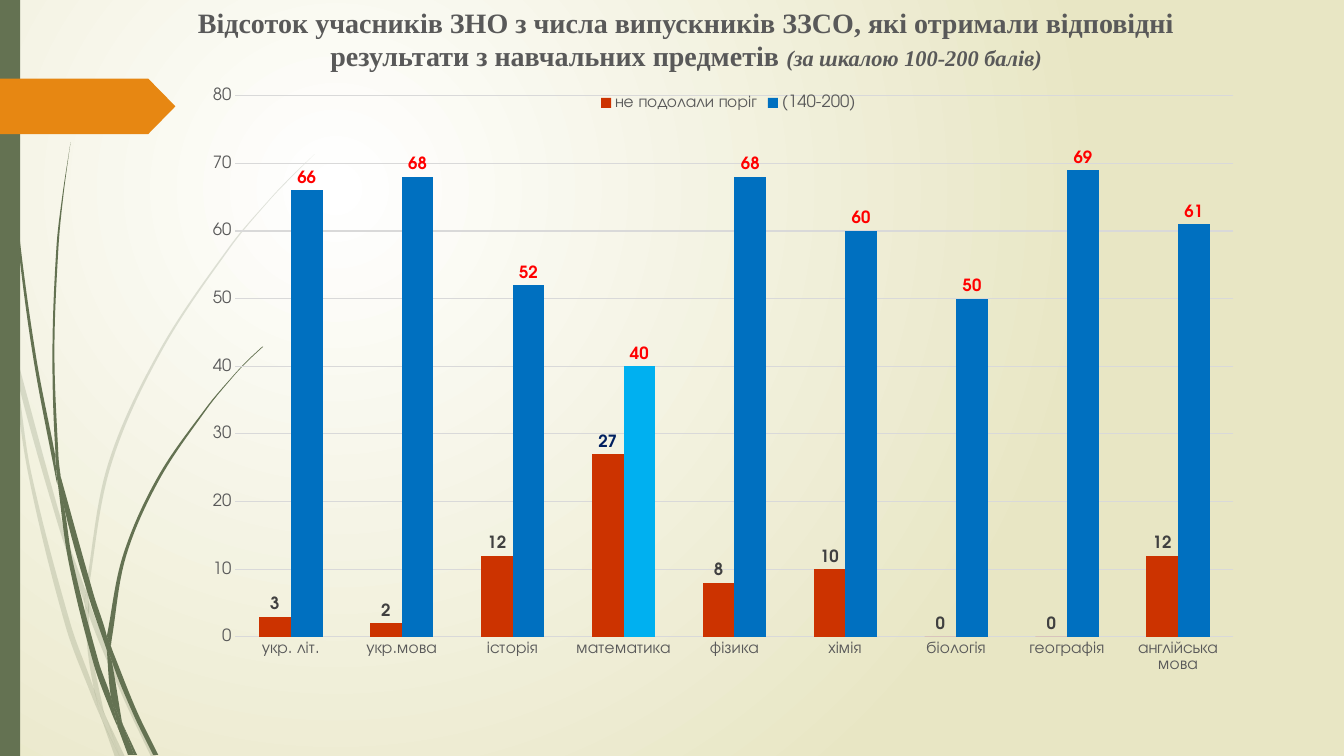
from dataclasses import dataclass
from math import dist

from lxml import etree
from pptx import Presentation
from pptx.chart.data import CategoryChartData
from pptx.dml.color import RGBColor
from pptx.enum.chart import XL_CHART_TYPE, XL_LABEL_POSITION, XL_LEGEND_POSITION, XL_TICK_MARK
from pptx.enum.shapes import MSO_SHAPE
from pptx.enum.text import MSO_ANCHOR, MSO_AUTO_SIZE, PP_ALIGN
from pptx.oxml import parse_xml
from pptx.oxml.ns import nsdecls, qn
from pptx.util import Pt

PX = 9144  # EMU in one px, 100 px to the inch
WIDTH, HEIGHT = 1333, 750
TITLE_ONLY = 5
PALE_ALPHA = 20
COLUMNS = XL_CHART_TYPE.COLUMN_CLUSTERED
OUTSIDE = XL_LABEL_POSITION.OUTSIDE_END
NO_TICK = XL_TICK_MARK.NONE
CHART_FONT, TITLE_FONT = "TeX Gyre Adventor", "Times New Roman"
COLORS = {
    "white": "FFFFFF", "sand": "E8E6C4", "green": "647252", "orange": "E78712",
    "text": "595959", "grid": "D9D9D9", "label": "404040", "navy": "002060",
    "brick": "CC3300", "blue": "0070C0", "sky": "00B0F0", "red": "FF0000",
}
Points = list[tuple[int, int]]


@dataclass
class Blade:
    """A piece of grass between two edges, both listed from tip to root."""
    left: Points
    right: Points


@dataclass
class Results:
    name: str
    values: tuple[int, ...]
    color: str
    label_color: str


PALE_BLADES = [
    Blade([(0, 299), (10, 344), (11, 350)], [(0, 282), (9, 322), (11, 350)]),
    Blade([(14, 345), (17, 376), (58, 522), (84, 599)], [(14, 345), (62, 520), (85, 586)]),
    Blade([(88, 596), (88, 610), (123, 694), (150, 751)],
          [(88, 596), (92, 607), (127, 692), (155, 751)]),
    Blade([(105, 711), (119, 751)], [(105, 711), (124, 751)]),
    Blade([(11, 350), (28, 470), (65, 621), (92, 693), (101, 714)],
          [(11, 350), (17, 376), (31, 469), (70, 619), (93, 683), (99, 707), (101, 714)]),
    Blade([(84, 599), (87, 646), (93, 683), (96, 692), (105, 711)],
          [(84, 599), (88, 608), (88, 610), (91, 646), (103, 706), (105, 711)]),
    Blade([(312, 153), (289, 175), (268, 197), (228, 244), (158, 348), (107, 461),
           (85, 584), (85, 586), (88, 596)],
          [(312, 153), (290, 175), (268, 198), (229, 245), (160, 349), (110, 462),
           (88, 584), (88, 596)]),
    Blade([(101, 714), (114, 751)], [(101, 714), (119, 751)]),
    Blade([(85, 586), (84, 599), (88, 608)], [(85, 586), (88, 596), (88, 610)]),
    Blade([(93, 683), (99, 707), (101, 714), (119, 751)],
          [(93, 683), (96, 692), (105, 711), (119, 751)]),
]
GREEN_BLADES = [
    Blade([(3, 0), (4, 48), (7, 110), (17, 233), (33, 355), (56, 477), (57, 481)],
          [(4, 0), (5, 48), (8, 109), (19, 232), (36, 355), (55, 453), (55, 457), (57, 481)]),
    Blade([(60, 472), (64, 505), (88, 592), (106, 645)],
          [(60, 472), (93, 590), (106, 631), (106, 645)]),
    Blade([(110, 641), (111, 656), (132, 708), (152, 749)],
          [(110, 641), (113, 649), (136, 706), (157, 749)]),
    Blade([(57, 477), (68, 557), (93, 659), (111, 708), (117, 722)],
          [(57, 477), (64, 505), (72, 556), (98, 657), (110, 691), (116, 717), (117, 722)]),
    Blade([(70, 141), (62, 193), (56, 245), (52, 349), (55, 449), (60, 472)],
          [(70, 141), (63, 193), (58, 245), (54, 349), (58, 453), (60, 472)]),
    Blade([(122, 719), (133, 749)], [(122, 719), (136, 749)]),
    Blade([(55, 449), (55, 453), (57, 477), (64, 505)], [(55, 449), (60, 472), (64, 505)]),
    Blade([(260, 344), (245, 358), (231, 373), (204, 405), (156, 474), (122, 551), (106, 631)],
          [(261, 344), (245, 359), (231, 374), (205, 406), (158, 476), (125, 552),
           (111, 633), (110, 641)]),
    Blade([(117, 722), (127, 749)], [(117, 722), (131, 749)]),
    Blade([(106, 645), (110, 691), (116, 706), (122, 719)],
          [(106, 645), (109, 651), (111, 656), (121, 716), (122, 719)]),
    Blade([(106, 631), (106, 645), (109, 651), (111, 656)],
          [(106, 631), (110, 641), (111, 656)]),
    Blade([(110, 691), (116, 717), (117, 722), (130, 749)],
          [(110, 691), (116, 706), (122, 719), (133, 749)]),
]
SUBJECTS = ["укр. літ.", "укр.мова", "історія", "математика", "фізика", "хімія",
            "біологія", "географія", "англійська мова"]
MATHS = SUBJECTS.index("математика")
RESULTS = [
    Results("не подолали поріг", (3, 2, 12, 27, 8, 10, 0, 0, 12), "brick", "label"),
    Results("(140-200)", (66, 68, 52, 40, 68, 60, 50, 69, 61), "blue", "red"),
]
TITLE_SPANS = [
    ("Відсоток учасників ЗНО з числа випускників ЗЗСО, які отримали відповідні "
     "результати з навчальних предметів ", 20, False),
    ("(за шкалою 100-200 балів)", 16, True),
]


def rgb(name: str) -> RGBColor:
    return RGBColor.from_string(COLORS[name])


def paint(shape, color: str) -> None:
    shape.fill.solid()
    shape.fill.fore_color.rgb = rgb(color)
    shape.line.fill.background()
    shape.shadow.inherit = False


def style(font, size: int, color: str, name: str = CHART_FONT, bold: bool = False) -> None:
    font.size, font.name, font.bold = Pt(size), name, bold
    font.color.rgb = rgb(color)


def bend(edge: Points) -> list[Points]:
    """Give the two handles and the end of each curve along an edge."""
    padded = [edge[0], *edge, edge[-1]]
    curves = []
    for a, b, c, d in zip(padded, padded[1:], padded[2:], padded[3:]):
        out, back = (dist(b, c) / dist(p, q) / 3 for p, q in ((a, c), (b, d)))
        curves.append([(b[0] + (c[0] - a[0]) * out, b[1] + (c[1] - a[1]) * out),
                       (c[0] - (d[0] - b[0]) * back, c[1] - (d[1] - b[1]) * back), c])
    return curves


def draw_background(page) -> None:
    fill = page.background.fill
    fill.gradient()
    for stop, position, color in zip(fill.gradient_stops, (0, 1), ("white", "sand")):
        stop.position = position
        stop.color.rgb = rgb(color)
    gradient = page.element.find(".//" + qn("a:gradFill"))
    gradient.replace(gradient.find(qn("a:lin")), parse_xml(
        f'<a:path {nsdecls("a")} path="circle">'
        '<a:fillToRect l="50000" t="50000" r="100000" b="100000"/></a:path>'))


def draw_blade(page, blade: Blade, pale: bool) -> None:
    upward = blade.right[::-1]
    cap = [None] if blade.left[-1] != upward[0] else []
    outline = [(x * PX, y * PX) for x, y in blade.left + upward[1 - len(cap):]]
    builder = page.shapes.build_freeform(*outline[0])
    builder.add_line_segments(outline[1:], close=True)
    shape = builder.convert_to_shape()
    paint(shape, "green")
    curves = bend(blade.left) + cap + bend(upward)
    for line, curve in zip(list(shape.element.iter(qn("a:lnTo"))), curves):
        if curve:
            line.tag = qn("a:cubicBezTo")
            line.clear()
            for x, y in curve:
                etree.SubElement(line, qn("a:pt"), x=str(round(x * PX) - shape.left),
                                 y=str(round(y * PX) - shape.top))
    if pale:
        color = shape.element.find(".//" + qn("a:srgbClr"))
        etree.SubElement(color, qn("a:alpha"), val=str(PALE_ALPHA * 1000))


def draw_preset(page, kind, color: str, left: int, top: int, width: int, height: int):
    shape = page.shapes.add_shape(kind, left * PX, top * PX, width * PX, height * PX)
    paint(shape, color)
    return shape


def draw_title(page) -> None:
    box = page.shapes.title
    box.left, box.top, box.width, box.height = 166 * PX, 0, 1029 * PX, 77 * PX
    frame = box.text_frame
    frame.word_wrap = True
    frame.auto_size = MSO_AUTO_SIZE.SHAPE_TO_FIT_TEXT
    frame.vertical_anchor = MSO_ANCHOR.TOP
    para = frame.paragraphs[0]
    para.alignment = PP_ALIGN.CENTER
    para.space_before = Pt(0)
    for text, size, italic in TITLE_SPANS:
        span = para.add_run()
        span.text = text
        style(span.font, size, "text", TITLE_FONT, bold=True)
        span.font.italic = italic


def draw_chart(page) -> None:
    data = CategoryChartData()
    data.categories = SUBJECTS
    for result in RESULTS:
        data.add_series(result.name, result.values)
    chart = page.shapes.add_chart(COLUMNS, 129 * PX, 83 * PX, 1187 * PX, 667 * PX, data).chart
    chart.has_title = False
    style(chart.font, 10, "text")
    chart.has_legend = True
    chart.legend.position = XL_LEGEND_POSITION.TOP
    chart.legend.include_in_layout = False
    style(chart.legend.font, 12, "text")

    # Axes and plot area
    for axis in (chart.category_axis, chart.value_axis):
        axis.major_tick_mark = axis.minor_tick_mark = NO_TICK
        axis.format.line.fill.background()
        style(axis.tick_labels.font, 12, "text")
    scale = chart.value_axis
    scale.minimum_scale, scale.maximum_scale, scale.major_unit = 0, 80, 10
    scale.major_gridlines.format.line.color.rgb = rgb("grid")
    scale.major_gridlines.format.line.width = Pt(0.75)
    area = chart.element.find(".//" + qn("c:plotArea"))
    for old in area.findall(qn("c:layout")):
        area.remove(old)
    frame = "".join(f'<c:{tag} val="{value}"/>' for tag, value in (
        ("layoutTarget", "inner"), ("xMode", "edge"), ("yMode", "edge"),
        ("x", 0.088), ("y", 0.018), ("w", 0.834), ("h", 0.805)))
    area.insert(0, parse_xml(f'<c:layout {nsdecls("c")}><c:manualLayout>{frame}'
                             '</c:manualLayout></c:layout>'))

    # Columns and their labels
    plot = chart.plots[0]
    plot.gap_width, plot.overlap, plot.vary_by_categories = 150, 0, False
    for series, result in zip(plot.series, RESULTS):
        series.invert_if_negative = False
        series.format.fill.solid()
        series.format.fill.fore_color.rgb = rgb(result.color)
        labels = series.data_labels
        labels.show_value, labels.position = True, OUTSIDE
        style(labels.font, 12, result.label_color, bold=True)
    failed, passed = plot.series
    maths_label = failed.points[MATHS].data_label
    style(maths_label.font, 12, "navy", bold=True)
    maths_label.position = OUTSIDE
    maths_column = passed.points[MATHS].format.fill
    maths_column.solid()
    maths_column.fore_color.rgb = rgb("sky")


def main() -> None:
    deck = Presentation()
    deck.slide_width, deck.slide_height = WIDTH * PX, HEIGHT * PX
    page = deck.slides.add_slide(deck.slide_layouts[TITLE_ONLY])
    draw_background(page)
    for blades, pale in ((PALE_BLADES, True), (GREEN_BLADES, False)):
        for blade in blades:
            draw_blade(page, blade, pale)
    draw_preset(page, MSO_SHAPE.RECTANGLE, "green", 0, 0, 20, HEIGHT)
    arrow = draw_preset(page, MSO_SHAPE.PENTAGON, "orange", 0, 78, 174, 55)
    arrow.adjustments[0] = 0.49
    draw_chart(page)
    draw_title(page)
    deck.save("out.pptx")


if __name__ == "__main__":
    main()
